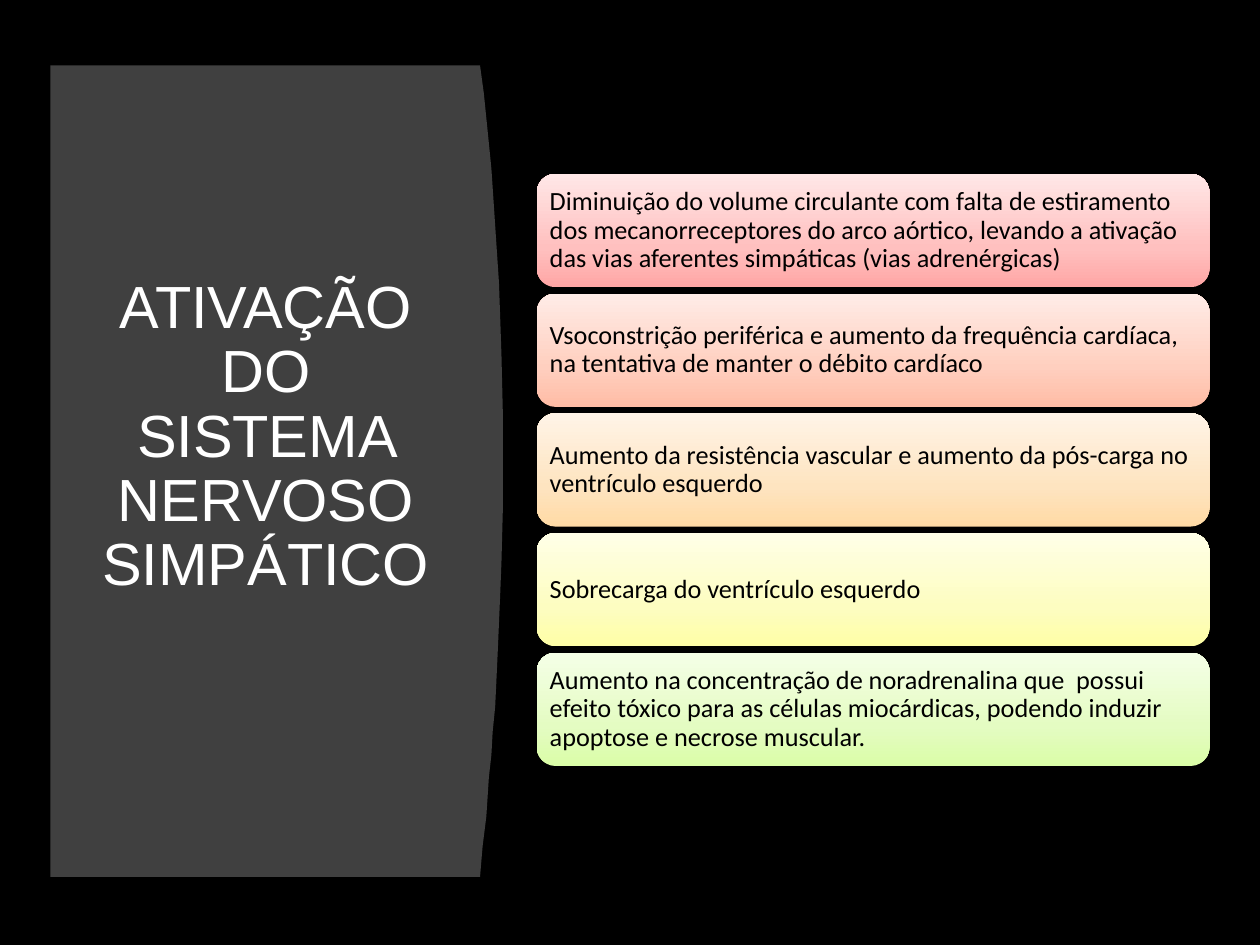
"""Build the slide on activation of the sympathetic nervous system."""
import copy
from dataclasses import dataclass

import lxml.etree
import pptx
import pptx.dml.color
import pptx.enum.shapes
import pptx.enum.text
import pptx.oxml.ns
import pptx.slide
import pptx.text.text
import pptx.util

Inches = pptx.util.Inches
CARD_LEFT, CARD_TOP, CARD_PITCH = 4.26, 1.38, 0.95
CARD_WIDTH, CARD_HEIGHT = 5.34, 0.9
PANEL_POINTS = (
    (0.4, 0.52), (3.81, 0.52), (3.84, 0.74), (3.87, 1.04), (3.9, 1.34),
    (3.92, 1.64), (3.94, 1.94), (3.96, 2.24), (3.97, 2.53), (3.98, 2.82),
    (3.99, 3.25), (3.99, 4.07), (3.98, 4.46), (3.97, 4.71), (3.96, 4.95),
    (3.95, 5.18), (3.94, 5.4), (3.93, 5.61), (3.91, 5.81), (3.9, 5.99),
    (3.88, 6.17), (3.86, 6.48), (3.83, 6.72), (3.81, 6.96), (0.4, 6.96),
)


@dataclass(frozen=True)
class Card:
    text: str
    bottom: str
    middle: str
    top: str


CARDS = (
    Card("Diminuição do volume circulante com falta de estiramento dos "
         "mecanorreceptores do arco aórtico, levando a ativação das vias "
         "aferentes simpáticas (vias adrenérgicas)",
         "FFA6A5", "FFC0BF", "FFE7E7"),
    Card("Vsoconstrição periférica e aumento da frequência cardíaca, na "
         "tentativa de manter o débito cardíaco",
         "FFBCA5", "FFCFBF", "FFECE7"),
    Card("Aumento da resistência vascular e aumento da pós-carga no "
         "ventrículo esquerdo",
         "FFDAA5", "FEE4C0", "FFF4E7"),
    Card("Sobrecarga do ventrículo esquerdo",
         "FEFEA6", "FDFDC1", "FFFFE7"),
    Card("Aumento na concentração de noradrenalina que  possui efeito tóxico "
         "para as células miocárdicas, podendo induzir apoptose e necrose "
         "muscular.",
         "DAFDA7", "E4FCC2", "F5FFE7"),
)


def color(value: str) -> pptx.dml.color.RGBColor:
    return pptx.dml.color.RGBColor.from_string(value)


def write(frame: pptx.text.text.TextFrame, text: str, font: str, size: int,
          value: str, alignment: pptx.enum.text.PP_ALIGN) -> None:
    frame.word_wrap = True
    frame.auto_size = pptx.enum.text.MSO_AUTO_SIZE.NONE
    frame.vertical_anchor = pptx.enum.text.MSO_ANCHOR.MIDDLE
    paragraph = frame.paragraphs[0]
    paragraph.alignment = alignment
    paragraph.line_spacing = 0.9
    run = paragraph.add_run()
    run.text = text
    run.font.name = font
    run.font.size = pptx.util.Pt(size)
    run.font.color.rgb = color(value)


def draw_panel(slide: pptx.slide.Slide) -> None:
    points = [(Inches(x), Inches(y)) for x, y in PANEL_POINTS]
    builder = slide.shapes.build_freeform(*points[0])
    builder.add_line_segments(points[1:], close=True)
    panel = builder.convert_to_shape()
    panel.shadow.inherit = False
    panel.fill.solid()
    panel.fill.fore_color.rgb = color("404040")
    panel.line.fill.background()


def draw_title(slide: pptx.slide.Slide) -> None:
    title = slide.shapes.title
    title.left, title.top = Inches(0.71), Inches(1.11)
    title.width, title.height = Inches(2.8), Inches(5.24)
    title.text_frame.margin_bottom = Inches(0.56)
    write(title.text_frame, "ATIVAÇÃO DO SISTEMA NERVOSO SIMPÁTICO",
          "Arial", 34, "FFFFFF", pptx.enum.text.PP_ALIGN.CENTER)
    slide.shapes._spTree.append(title._element)


def draw_card(slide: pptx.slide.Slide, card: Card, top: float) -> None:
    shape = slide.shapes.add_shape(
        pptx.enum.shapes.MSO_SHAPE.ROUNDED_RECTANGLE, Inches(CARD_LEFT),
        Inches(top), Inches(CARD_WIDTH), Inches(CARD_HEIGHT))
    shape.line.fill.background()
    shape.fill.gradient()
    shape.fill.gradient_angle = 90
    properties = shape._element.spPr
    stop_list = properties.find(".//" + pptx.oxml.ns.qn("a:gsLst"))
    stop_list.insert(1, copy.deepcopy(stop_list[0]))
    stops = zip(shape.fill.gradient_stops, (0, 0.35, 1),
                (card.bottom, card.middle, card.top))
    for stop, position, value in stops:
        stop.position = position
        stop.color.rgb = color(value)

    shape.shadow.inherit = False
    effects = properties.find(pptx.oxml.ns.qn("a:effectLst"))
    shadow = lxml.etree.SubElement(
        effects, pptx.oxml.ns.qn("a:outerShdw"), blurRad="40000",
        dist="20000", dir="5400000", rotWithShape="0")
    black = lxml.etree.SubElement(
        shadow, pptx.oxml.ns.qn("a:srgbClr"), val="000000")
    lxml.etree.SubElement(black, pptx.oxml.ns.qn("a:alpha"), val="38000")

    frame = shape.text_frame
    frame.margin_left = frame.margin_right = Inches(0.06)
    frame.margin_top = frame.margin_bottom = Inches(0.06)
    write(frame, card.text, "Calibri", 15, "000000",
          pptx.enum.text.PP_ALIGN.LEFT)


def main() -> None:
    presentation = pptx.Presentation()
    presentation.slide_width = Inches(10)
    presentation.slide_height = Inches(7.5)
    slide = presentation.slides.add_slide(presentation.slide_layouts[5])
    slide.background.fill.solid()
    slide.background.fill.fore_color.rgb = color("000000")
    draw_panel(slide)
    draw_title(slide)
    for index, card in enumerate(CARDS):
        draw_card(slide, card, CARD_TOP + index * CARD_PITCH)
    presentation.save("out.pptx")


if __name__ == "__main__":
    main()
